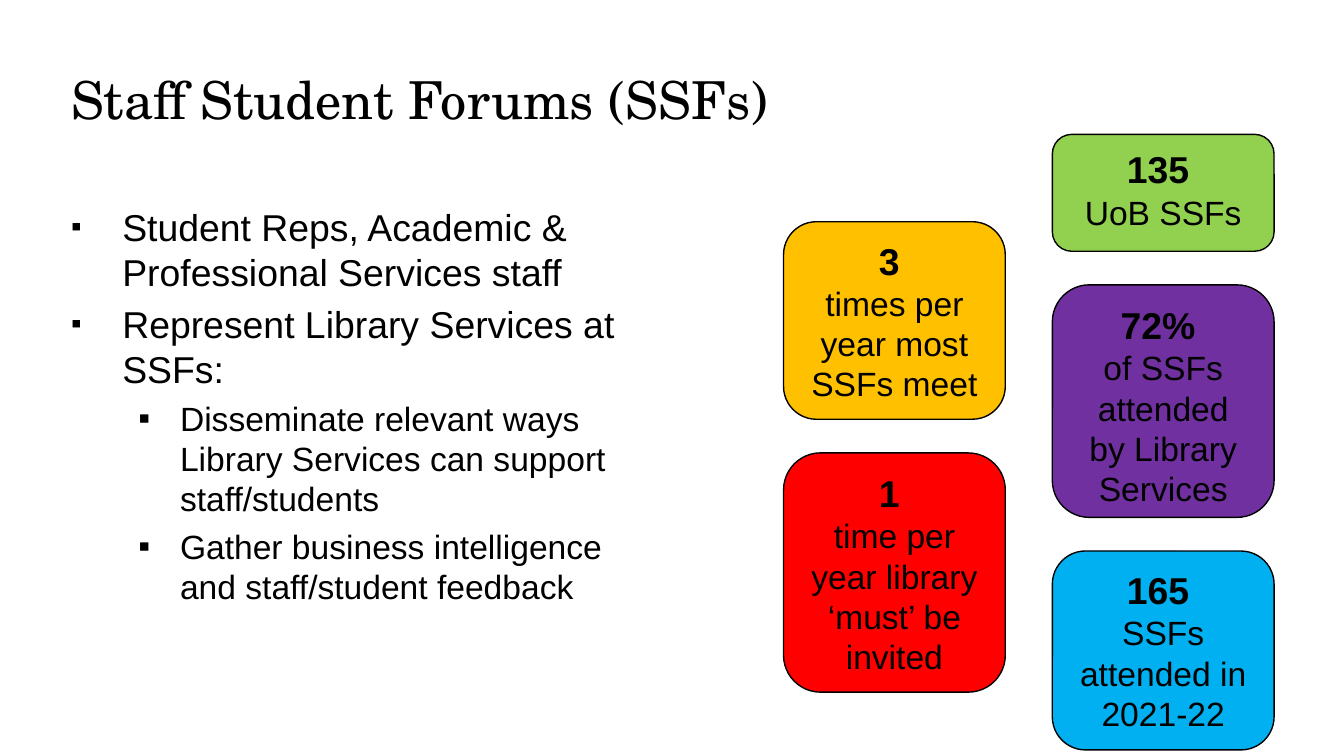
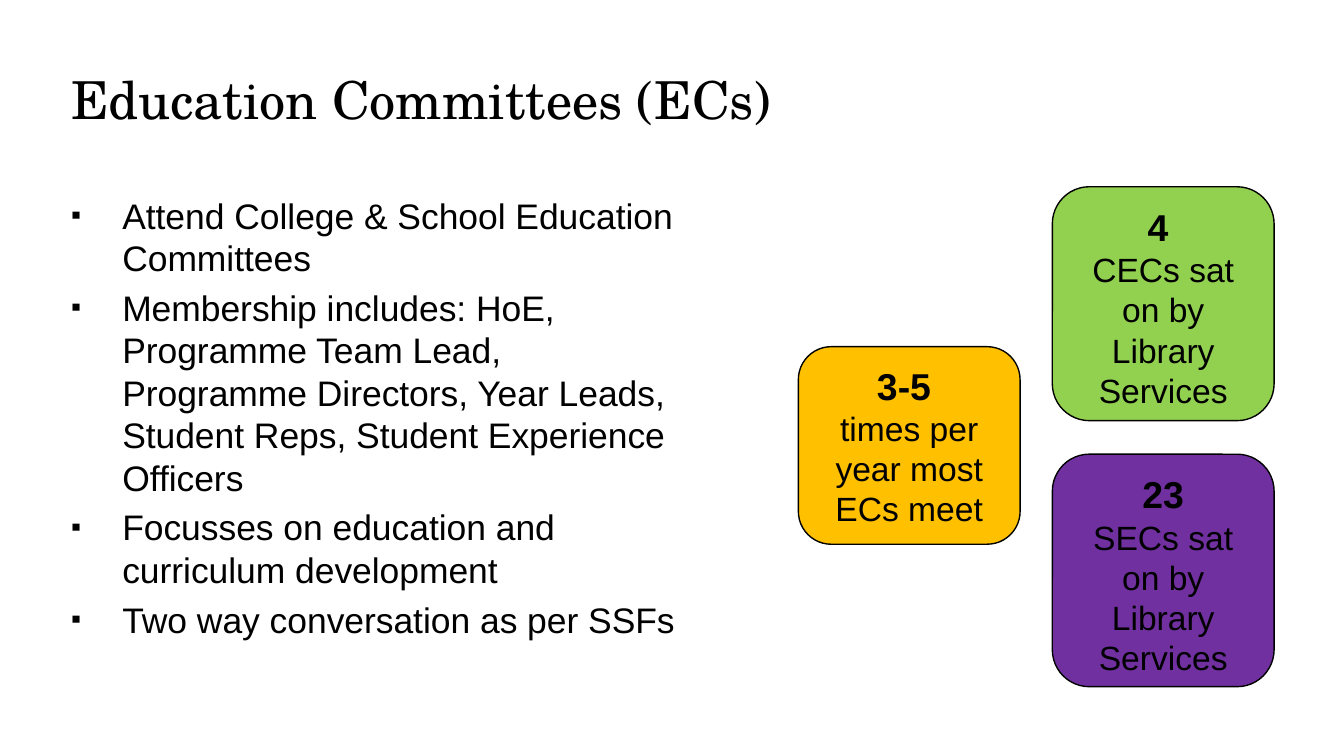
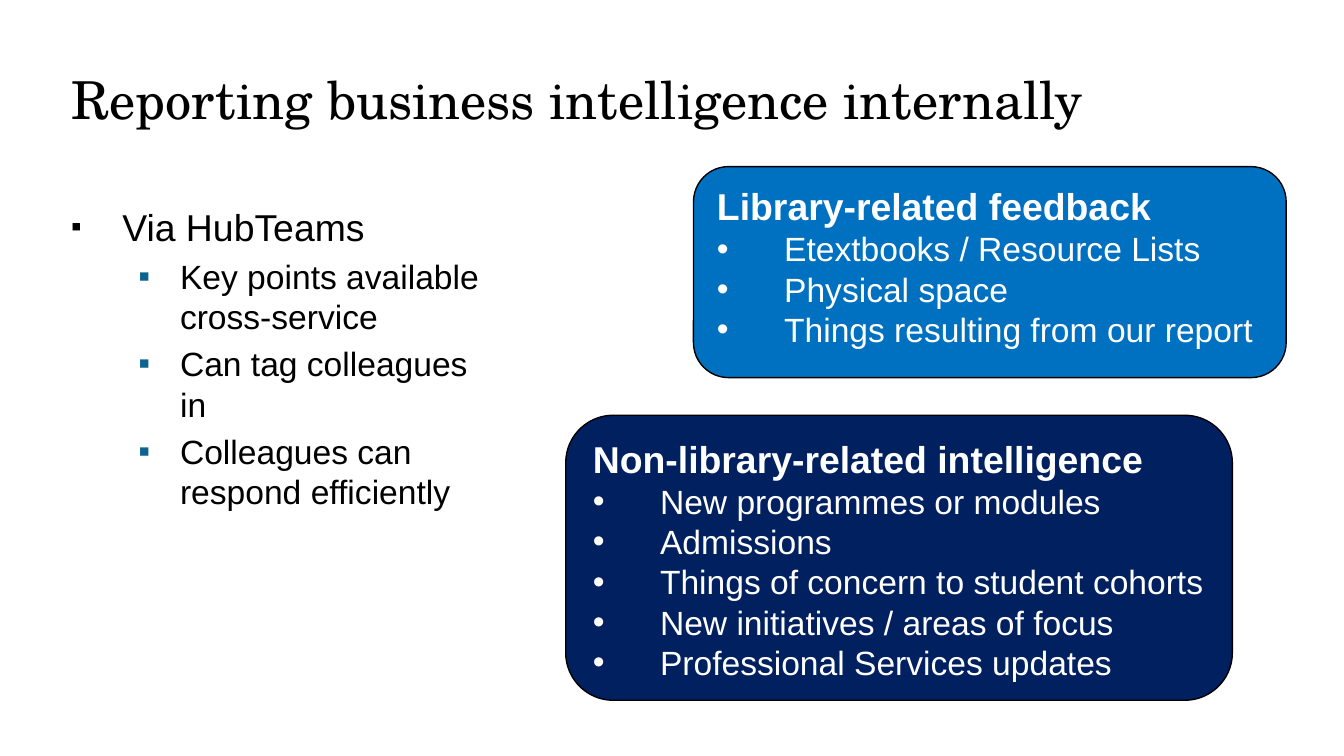
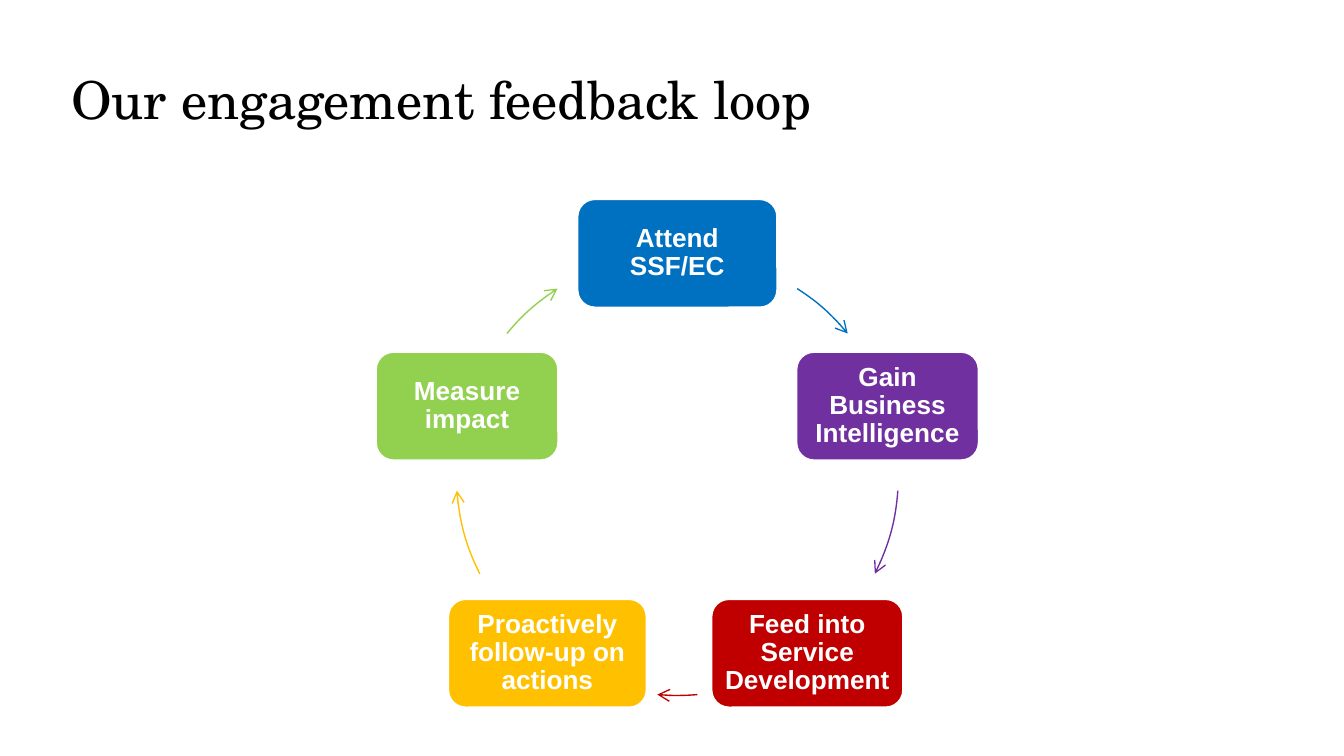
import math

import lxml.etree
import pptx
import pptx.dml.color
import pptx.enum.shapes
import pptx.enum.text
import pptx.oxml.ns
import pptx.util

SHAPES = pptx.enum.shapes.MSO_SHAPE
ALIGN = pptx.enum.text.PP_ALIGN
ANCHOR = pptx.enum.text.MSO_ANCHOR
Inches = pptx.util.Inches

SLIDE_WIDTH = 10
SLIDE_HEIGHT = SLIDE_WIDTH * 9 / 16
MARGIN = 0.43
TITLE_BOX = (MARGIN, 0.45, 8.5, 0.94)
TITLE_FONT, BODY_FONT = "TeX Gyre Schola", "Arial"
HEAD_SIZE, DETAIL_SIZE = 20, 18
CARD_WIDTH, CARD_GAP = 1.65, 0.25
LEFT_STACK, RIGHT_STACK = 5.83, 7.83

COLOURS = {
    "black": "000000", "white": "FFFFFF", "green": "92D050",
    "amber": "FFC000", "red": "FF0000", "purple": "7030A0",
    "sky": "00B0F0", "blue": "0070C0", "navy": "002060",
    "crimson": "C00000", "teal": "0A648F",
}

SLIDES = [
    {
        "title": "Staff Student Forums (SSFs)",
        "body": {
            "box": (MARGIN, 1.47, 4.57, 3.23),
            "sizes": (20, 18),
            "bullets": ("black", "black"),
            "items": [
                (0, "Student Reps, Academic & Professional Services staff"),
                (0, "Represent Library Services at SSFs:"),
                (1, "Disseminate relevant ways Library Services can support staff/students"),
                (1, "Gather business intelligence and staff/student feedback"),
            ],
        },
        "stacks": [
            (RIGHT_STACK, 1, [
                (0.87, "green", "135 ", "UoB SSFs"),
                (1.73, "purple", "72% ", "of SSFs attended by Library Services"),
                (1.48, "sky", "165 ", "SSFs attended in 2021-22"),
            ]),
            (LEFT_STACK, 1.65, [
                (1.47, "amber", "3 ", "times per year most SSFs meet"),
                (1.78, "red", "1 ", "time per year library ‘must’ be invited"),
            ]),
        ],
    },
    {
        "title": "Education Committees (ECs)",
        "body": {
            "box": (MARGIN, 1.39, 4.8, 3.39),
            "sizes": (19, 18),
            "bullets": ("black", "black"),
            "items": [
                (0, "Attend College & School Education Committees"),
                (0, "Membership includes: HoE, Programme Team Lead, Programme Directors, "
                    "Year Leads, Student Reps, Student Experience Officers"),
                (0, "Focusses on education and curriculum development"),
                (0, "Two way conversation as per SSFs"),
            ],
        },
        "stacks": [
            (RIGHT_STACK, 1.39, [
                (1.74, "green", "4 ", "CECs sat on by Library Services"),
                (1.73, "purple", "23", "SECs sat on by Library Services"),
            ]),
            (5.94, 2.58, [(1.47, "amber", "3-5 ", "times per year most ECs meet")]),
        ],
    },
    {
        "title": "Reporting business intelligence internally",
        "body": {
            "box": (MARGIN, 1.47, 3.31, 3.23),
            "sizes": (20, 18),
            "bullets": ("black", "teal"),
            "items": [
                (0, "Via HubTeams"),
                (1, "Key points available cross-service"),
                (1, "Can tag colleagues in"),
                (1, "Colleagues can respond efficiently"),
            ],
        },
        "panels": [
            ((5.16, 1.24, 4.41, 1.57), "blue", "Library-related feedback", [
                "Etextbooks / Resource Lists",
                "Physical space",
                "Things resulting from our report",
            ]),
            ((4.21, 3.09, 4.96, 2.12), "navy", "Non-library-related intelligence", [
                "New programmes or modules",
                "Admissions",
                "Things of concern to student cohorts",
                "New initiatives / areas of focus",
                "Professional Services updates",
            ]),
        ],
    },
    {
        "title": "Our engagement feedback loop",
        "loop": [
            ("Attend SSF/EC", 1.5, "blue", (302.8, 320.4)),
            ("Gain Business Intelligence", 1.37, "purple", (4.2, 26.7)),
            ("Feed into Service Development", 1.44, "crimson", (84.8, 95.2)),
            ("Proactively follow-up on actions", 1.49, "amber", (153.3, 175.8)),
            ("Measure impact", 1.37, "green", (219.6, 237.2)),
        ],
    },
]

LOOP_CENTRE = (5.04, 3.53)
LOOP_DIAMETER = 3.29
STEP_HEIGHT = 0.82


def rgb(name):
    return pptx.dml.color.RGBColor.from_string(COLOURS[name])


def add_xml(parent, tag, **attributes):
    return lxml.etree.SubElement(parent, pptx.oxml.ns.qn(tag), attributes)


def place(shape, area):
    shape.left, shape.top, shape.width, shape.height = map(Inches, area)


def add_bullet(paragraph, character, indent, hanging, colour, percent=100):
    properties = paragraph._p.get_or_add_pPr()
    properties.set("marL", str(Inches(indent)))
    properties.set("indent", str(-Inches(hanging)))
    add_xml(add_xml(properties, "a:buClr"), "a:srgbClr", val=COLOURS[colour])
    add_xml(properties, "a:buSzPct", val=str(percent * 1000))
    add_xml(properties, "a:buFont", typeface=BODY_FONT)
    add_xml(properties, "a:buChar", char=character)


def style(paragraph, size, colour, bold=False, align=ALIGN.LEFT, font=BODY_FONT):
    paragraph.alignment = align
    paragraph.font.name = font
    paragraph.font.size = pptx.util.Pt(size)
    paragraph.font.bold = bold
    paragraph.font.color.rgb = rgb(colour)


def add_paragraph(frame, position, text):
    paragraph = frame.paragraphs[0] if position == 0 else frame.add_paragraph()
    paragraph.text = text
    return paragraph


def prepare(frame, anchor=ANCHOR.TOP):
    frame.word_wrap = True
    frame.auto_size = pptx.enum.text.MSO_AUTO_SIZE.NONE
    frame.vertical_anchor = anchor


def add_title(page, text):
    title = page.shapes.title
    place(title, TITLE_BOX)
    prepare(title.text_frame)
    style(add_paragraph(title.text_frame, 0, text), 28, "black", font=TITLE_FONT)


def add_body(page, body):
    holder = page.placeholders[1]
    place(holder, body["box"])
    frame = holder.text_frame
    prepare(frame)
    for position, (level, text) in enumerate(body["items"]):
        size = body["sizes"][level]
        paragraph = add_paragraph(frame, position, text)
        paragraph.level = level
        indent, hanging, percent = ((0.38, 0.38, 80), (0.81, 0.31, 100))[level]
        add_bullet(paragraph, "▪", indent, hanging, body["bullets"][level], percent)
        paragraph.space_before = pptx.util.Pt(0.2 * size if position else 0)
        style(paragraph, size, "black")


def add_rounded(page, area, fill, line="black", weight=0.75):
    box = page.shapes.add_shape(SHAPES.ROUNDED_RECTANGLE, *map(Inches, area))
    box.shadow.inherit = False
    box.fill.solid()
    box.fill.fore_color.rgb = rgb(fill)
    box.line.color.rgb = rgb(line)
    box.line.width = pptx.util.Pt(weight)
    prepare(box.text_frame)
    return box


def add_stack(page, left, top, cards):
    for height, fill, figure, caption in cards:
        frame = add_rounded(page, (left, top, CARD_WIDTH, height), fill).text_frame
        style(add_paragraph(frame, 0, figure), HEAD_SIZE, "black", True, ALIGN.CENTER)
        style(add_paragraph(frame, 1, caption), DETAIL_SIZE, "black", align=ALIGN.CENTER)
        top += height + CARD_GAP


def add_panel(page, area, fill, heading, items):
    frame = add_rounded(page, area, fill).text_frame
    style(add_paragraph(frame, 0, heading), HEAD_SIZE, "white", True)
    for position, item in enumerate(items, 1):
        paragraph = add_paragraph(frame, position, item)
        add_bullet(paragraph, "•", 0.5, 0.5, "white")
        style(paragraph, DETAIL_SIZE, "white")


def add_step(page, centre, width, text, fill):
    area = (centre[0] - width / 2, centre[1] - STEP_HEIGHT / 2, width, STEP_HEIGHT)
    frame = add_rounded(page, area, fill, "white", 2).text_frame
    frame.vertical_anchor = ANCHOR.MIDDLE
    frame.margin_left = frame.margin_right = Inches(0.06)
    frame.margin_top = frame.margin_bottom = Inches(0.06)
    paragraph = add_paragraph(frame, 0, text)
    paragraph.line_spacing = 0.9
    style(paragraph, 14, "white", True, ALIGN.CENTER)


def add_arc(page, angles, colour):
    corner = [middle - LOOP_DIAMETER / 2 for middle in LOOP_CENTRE]
    area = (*corner, LOOP_DIAMETER, LOOP_DIAMETER)
    arc = page.shapes.add_shape(SHAPES.ARC, *map(Inches, area))
    arc.shadow.inherit = False
    for position, angle in enumerate(angles):
        arc.adjustments[position] = angle * 0.6
    arc.fill.background()
    arc.line.color.rgb = rgb(colour)
    arc.line.width = pptx.util.Pt(0.75)
    add_xml(arc.line._get_or_add_ln(), "a:tailEnd", type="arrow")


def add_loop(page, steps):
    for position, (text, width, colour, angles) in enumerate(steps):
        turn = math.radians(position * 360 / len(steps) - 90)
        centre = (LOOP_CENTRE[0] + LOOP_DIAMETER / 2 * math.cos(turn),
                  LOOP_CENTRE[1] + LOOP_DIAMETER / 2 * math.sin(turn))
        add_step(page, centre, width, text, colour)
        add_arc(page, angles, colour)


def main():
    deck = pptx.Presentation()
    deck.slide_width, deck.slide_height = Inches(SLIDE_WIDTH), Inches(SLIDE_HEIGHT)
    for content in SLIDES:
        layout = deck.slide_layouts[1 if "body" in content else 5]
        page = deck.slides.add_slide(layout)
        add_title(page, content["title"])
        if "body" in content:
            add_body(page, content["body"])
        for stack in content.get("stacks", []):
            add_stack(page, *stack)
        for panel in content.get("panels", []):
            add_panel(page, *panel)
        add_loop(page, content.get("loop", []))
    deck.save("out.pptx")


if __name__ == "__main__":
    main()
